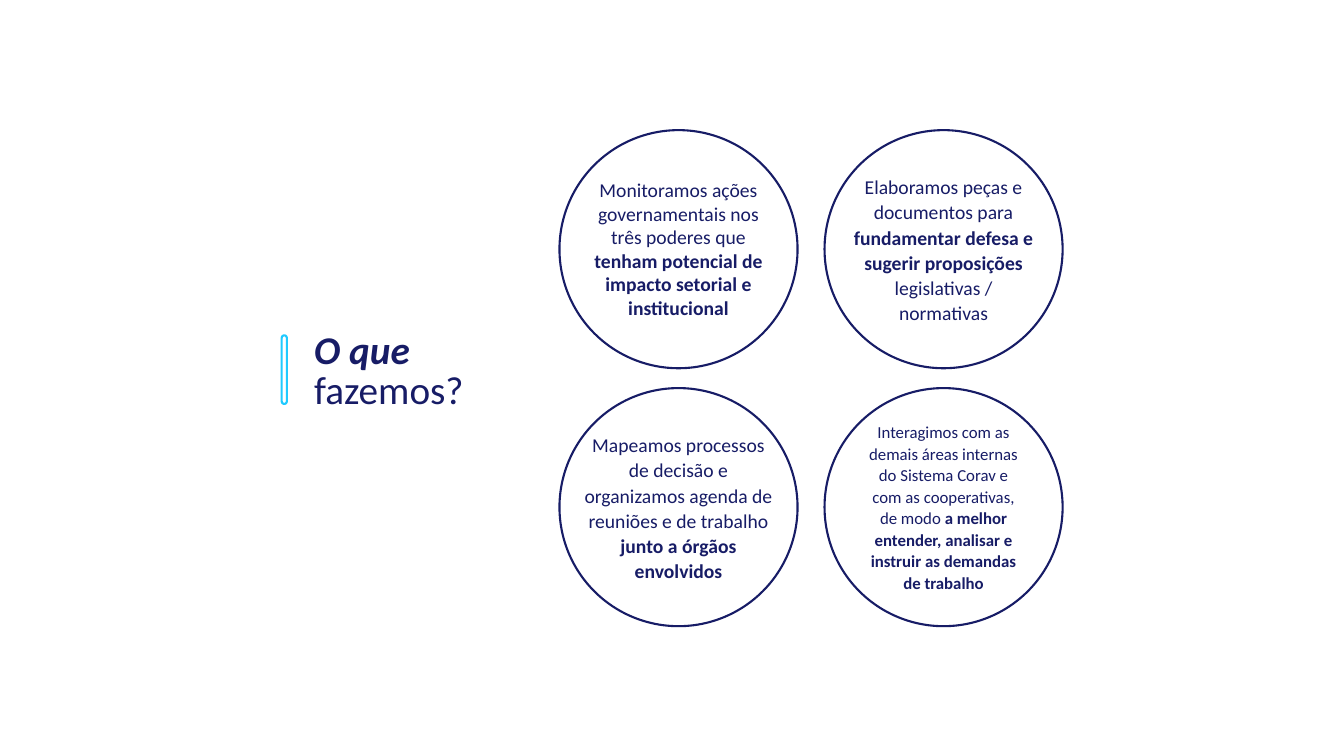
from pptx import Presentation
from pptx.dml.color import RGBColor
from pptx.enum.shapes import MSO_SHAPE
from pptx.enum.text import MSO_AUTO_SIZE, PP_ALIGN
from pptx.util import Cm, Pt

NAVY = RGBColor(0x17, 0x1C, 0x66)
CYAN = RGBColor(0x1F, 0xCA, 0xFF)

DIAMETER = 6
LEFT, TOP = 14.1, 3.28
STEP_X, STEP_Y = 6.68, 6.5

# Text width, text height, size, line spacing, runs as (text, bold)
ACTIVITIES = [
    (5.28, 3.84, 14, 1.0, [
        ("Monitoramos ações governamentais nos três poderes que ", False),
        ("tenham potencial de impacto setorial e institucional", True)]),
    (5.1, 4.06, 14, 1.07, [
        ("Elaboramos peças e documentos para ", False),
        ("fundamentar defesa e sugerir proposições ", True),
        ("legislativas / normativas", False)]),
    (5.28, 4.06, 14, 1.07, [
        ("Mapeamos processos de decisão e organizamos agenda de reuniões "
         "e de trabalho ", False),
        ("junto a órgãos envolvidos", True)]),
    (4.5, 4.62, 12, 1.07, [
        ("Interagimos com as demais áreas internas do Sistema Corav e "
         "com as cooperativas, de modo ", False),
        ("a melhor entender, analisar e instruir as demandas de trabalho",
         True)]),
]


def add_outline(s, kind, x, y, w, h, color):
    sp = s.shapes.add_shape(kind, Cm(x), Cm(y), Cm(w), Cm(h))
    sp.shadow.inherit = False
    sp.fill.background()
    sp.line.color.rgb = color
    sp.line.width = Pt(1.5)
    return sp


def add_text(s, x, y, w, h, runs, size, wrap=True, **paragraph_format):
    """Add a one-paragraph box; runs are (text, font attributes)."""
    tf = s.shapes.add_textbox(Cm(x), Cm(y), Cm(w), Cm(h)).text_frame
    tf.word_wrap = wrap
    tf.auto_size = MSO_AUTO_SIZE.SHAPE_TO_FIT_TEXT
    p = tf.paragraphs[0]
    for name, value in paragraph_format.items():
        setattr(p, name, value)
    for text, extra in runs:
        r = p.add_run()
        r.text = text
        r.font.color.rgb = NAVY
        font_format = {"name": "Calibri", "size": Pt(size), **extra}
        for name, value in font_format.items():
            setattr(r.font, name, value)


def add_title(s):
    emphasis = {"bold": True, "italic": True}
    add_text(s, 7.67, 8.08, 2.95, 1.45, [("O que", emphasis)], 28, wrap=False)
    add_text(s, 7.67, 9.09, 4.32, 1.45, [("fazemos?", {})], 28, wrap=False)
    bar = add_outline(s, MSO_SHAPE.ROUNDED_RECTANGLE,
                      7.1, 8.45, 0.13, 1.73, CYAN)
    bar.adjustments[0] = 0.5


def add_activity(s, x, y, w, h, size, spacing, runs):
    """Add a circle with its text centred inside."""
    add_outline(s, MSO_SHAPE.OVAL, x, y, DIAMETER, DIAMETER, NAVY)
    add_text(s, x + (DIAMETER - w) / 2, y + (DIAMETER - h) / 2, w, h,
             [(text, {"bold": bold}) for text, bold in runs], size,
             alignment=PP_ALIGN.CENTER, line_spacing=spacing)


def main():
    prs = Presentation()
    prs.slide_width, prs.slide_height = Cm(33.87), Cm(19.05)
    s = prs.slides.add_slide(prs.slide_layouts[6])

    # Title with accent bar
    add_title(s)

    # Two-by-two grid of activities
    for i, activity in enumerate(ACTIVITIES):
        row, col = divmod(i, 2)
        add_activity(s, LEFT + col * STEP_X, TOP + row * STEP_Y, *activity)

    prs.save("out.pptx")


if __name__ == "__main__":
    main()
